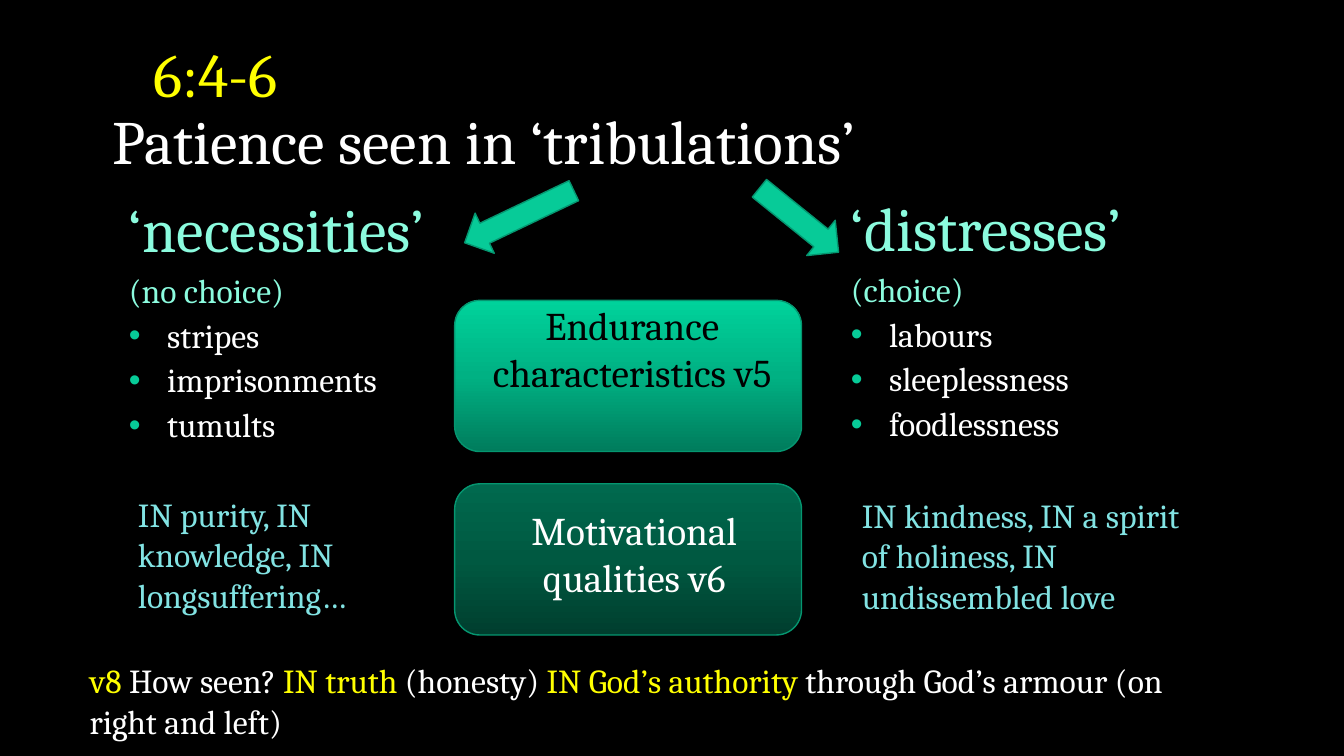
from copy import deepcopy

from lxml import etree
from pptx import Presentation
from pptx import util as u
from pptx.dml.color import RGBColor
from pptx.enum import shapes, text
from pptx.oxml.ns import qn

PX = 9144
FONT = "Cambria"
BLACK = RGBColor(0x00, 0x00, 0x00)
WHITE = RGBColor(0xFF, 0xFF, 0xFF)
YELLOW = RGBColor(0xFF, 0xFF, 0x00)
MINT = RGBColor(0x8B, 0xFB, 0xDE)
AQUA = RGBColor(0x82, 0xE3, 0xE3)
GREEN = RGBColor(0x07, 0xCB, 0x98)
EDGE = RGBColor(0x05, 0x96, 0x70)
BRIGHT = [RGBColor(0x00, 0x7C, 0x5C), RGBColor(0x00, 0xB1, 0x83), RGBColor(0x00, 0xD2, 0x9B)]
DARK = [RGBColor(0x00, 0x3E, 0x2E), RGBColor(0x00, 0x59, 0x41), RGBColor(0x00, 0x69, 0x4E)]


def px(*lengths):
    """Turn pixel lengths into EMU."""
    return [u.Emu(length * PX) for length in lengths]


def add_run(paragraph, words, size, color):
    """Add one styled run."""
    run = paragraph.add_run()
    run.text = words
    run.font.name = FONT
    run.font.size = u.Pt(size)
    run.font.color.rgb = color


def add_frame(slide, box, anchor=text.MSO_ANCHOR.TOP):
    """Add a wrapping text box and return its text frame."""
    frame = slide.shapes.add_textbox(*px(*box)).text_frame
    frame.word_wrap = True
    frame.vertical_anchor = anchor
    return frame


def add_label(slide, box, runs, size, align=text.PP_ALIGN.LEFT):
    """Add a one-paragraph text of (words, color) runs."""
    paragraph = add_frame(slide, box).paragraphs[0]
    paragraph.alignment = align
    for words, color in runs:
        add_run(paragraph, words, size, color)


def indent(paragraph, left, hanging, before):
    """Set the indents and spacing of a paragraph."""
    paragraph.line_spacing = 0.9
    paragraph.space_before = u.Pt(before)
    props = paragraph._p.get_or_add_pPr()
    props.set("marL", str(left * PX))
    props.set("indent", str(-hanging * PX))
    return props


def add_bullet(props):
    """Give paragraph properties a green bullet."""
    color = etree.SubElement(props, qn("a:buClr"))
    etree.SubElement(color, qn("a:srgbClr"), val=str(GREEN))
    etree.SubElement(props, qn("a:buFont"), typeface="Arial")
    etree.SubElement(props, qn("a:buChar"), char="•")


def add_trials(slide, box, heading, remark, trials):
    """Add a heading, a remark and a bulleted list."""
    frame = add_frame(slide, box)
    title = frame.paragraphs[0]
    indent(title, 39, 0, 18)
    add_run(title, heading, 44, MINT)
    note = frame.add_paragraph()
    indent(note, 39, 0, 6)
    add_run(note, remark, 24, MINT)
    for trial in trials:
        item = frame.add_paragraph()
        add_bullet(indent(item, 77, 38, 6))
        add_run(item, trial, 24, WHITE)


def add_outlined(slide, kind, box):
    """Add a preset shape with the thin green outline."""
    shape = slide.shapes.add_shape(kind, *px(*box))
    shape.shadow.inherit = False
    shape.line.color.rgb = EDGE
    shape.line.width = u.Pt(1)
    return shape


def add_arrow(slide, box, rotation):
    """Add a turned block arrow."""
    arrow = add_outlined(slide, shapes.MSO_SHAPE.DOWN_ARROW, box)
    arrow.rotation = rotation
    arrow.fill.solid()
    arrow.fill.fore_color.rgb = GREEN


def add_panel(slide, top, colors):
    """Add a rounded panel shaded from bottom to top."""
    panel = add_outlined(slide, shapes.MSO_SHAPE.ROUNDED_RECTANGLE, (451, top, 344, 150))
    panel.fill.gradient()
    panel.fill.gradient_angle = 90
    stop_list = panel._element.spPr.find(qn("a:gradFill")).find(qn("a:gsLst"))
    stop_list.insert(1, deepcopy(stop_list[0]))
    for stop, position, color in zip(panel.fill.gradient_stops, (0, 0.5, 1), colors):
        stop.position = position
        stop.color.rgb = color


def main():
    """Build the slide and save it."""
    deck = Presentation()
    deck.slide_width, deck.slide_height = px(1333, 750)
    slide = deck.slides.add_slide(deck.slide_layouts[6])
    slide.background.fill.solid()
    slide.background.fill.fore_color.rgb = BLACK

    verses = add_frame(slide, (142, 43, 1050, 72), text.MSO_ANCHOR.BOTTOM).paragraphs[0]
    verses.line_spacing = 0.9
    add_run(verses, "6:4-6", 44, YELLOW)
    add_trials(slide, (79, 193, 376, 255), "‘necessities’", "(no choice)",
               ("stripes", "imprisonments", "tumults"))
    add_label(slide, (102, 97, 967, 84), [("Patience seen in ‘tribulations’", WHITE)], 44)
    add_trials(slide, (795, 192, 362, 258), "‘distresses’", "(choice)",
               ("labours", "sleeplessness", "foodlessness"))

    add_arrow(slide, (493, 155, 44, 120), 64.5)
    add_arrow(slide, (770, 168, 45, 101), 308.9)

    center = text.PP_ALIGN.CENTER
    add_panel(slide, 298, BRIGHT)
    add_label(slide, (473, 294, 308, 151), [("Endurance characteristics v5", BLACK)], 28, center)
    add_panel(slide, 480, DARK)
    add_label(slide, (475, 497, 308, 104), [("Motivational qualities v6", WHITE)], 28, center)

    add_label(slide, (127, 485, 258, 131),
              [("IN purity, IN knowledge, IN longsuffering…", AQUA)], 24)
    add_label(slide, (845, 486, 346, 131),
              [("IN kindness, IN a spirit of holiness, IN undissembled love", AQUA)], 24)
    add_label(slide, (79, 650, 1150, 91), [
        ("v8", YELLOW),
        (" How seen? ", WHITE),
        ("IN truth ", YELLOW),
        ("(honesty) ", WHITE),
        ("IN God’s authority ", YELLOW),
        ("through God’s armour (on right and left)", WHITE),
    ], 24)
    deck.save("out.pptx")


if __name__ == "__main__":
    main()
